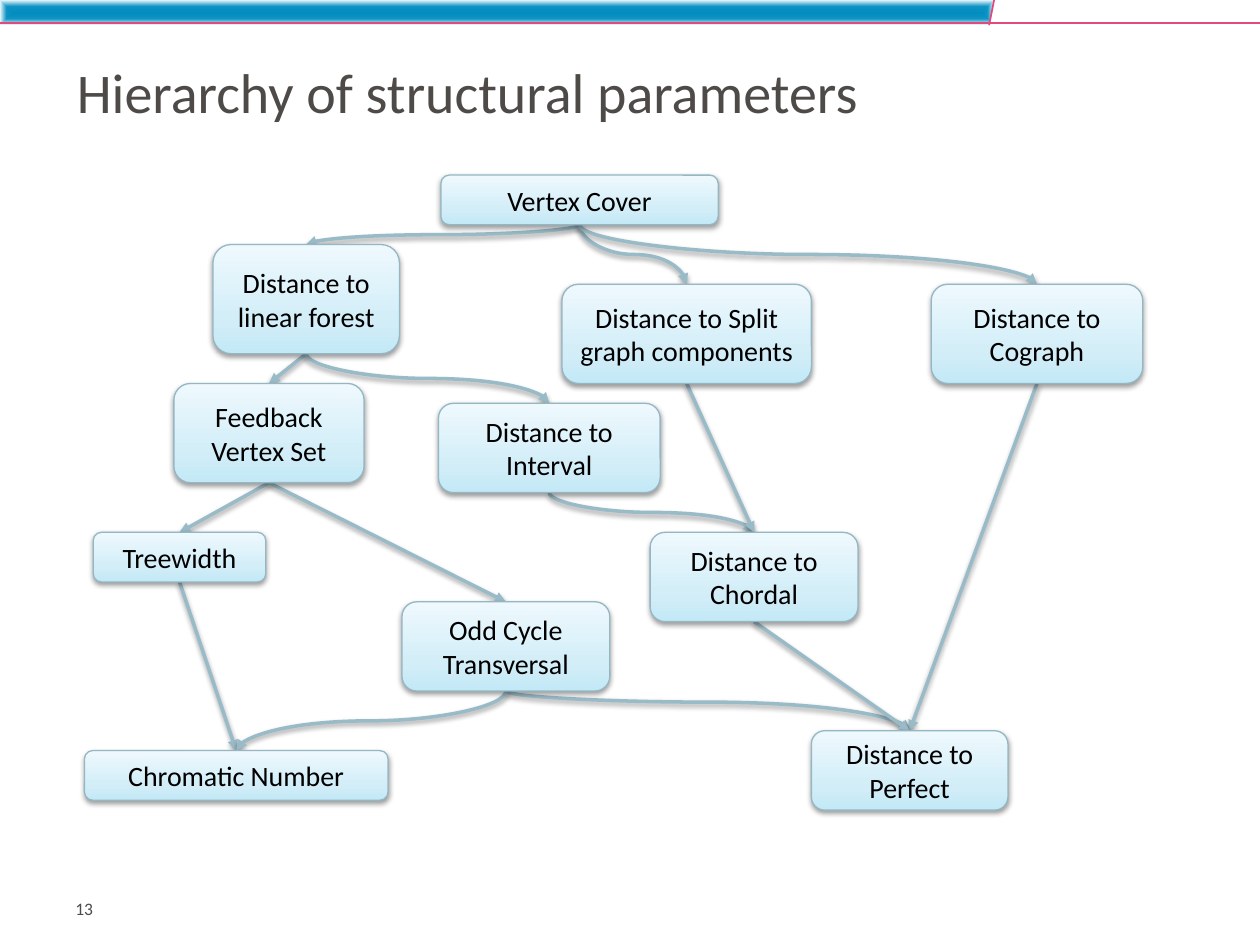
from lxml import etree
from pptx import Presentation
from pptx.dml.color import RGBColor
from pptx.enum.shapes import MSO_CONNECTOR, MSO_SHAPE
from pptx.enum.text import MSO_ANCHOR, PP_ALIGN
from pptx.oxml import parse_xml
from pptx.oxml.ns import nsdecls, qn
from pptx.util import Inches, Pt

STRAIGHT, CURVE = MSO_CONNECTOR.STRAIGHT, MSO_CONNECTOR.CURVE
ROUNDED = MSO_SHAPE.ROUNDED_RECTANGLE
LEFT, CENTER = PP_ALIGN.LEFT, PP_ALIGN.CENTER
TOP, MIDDLE = MSO_ANCHOR.TOP, MSO_ANCHOR.MIDDLE

FONT = "Calibri"
COLORS = {
    "text": "4E4A48", "label": "000000", "shadow": "000000",
    "accent": "E2497F", "arrow": "99BBC7", "border": "95B7C4",
}
BAR_STOPS = [(0, "038CC0"), (49, "0F94C4"), (100, "EEF9FD")]
NODE_STOPS = [(0, "C3E8F6"), (35, "D4EEF8"), (100, "EEF9FD")]
UPWARD = '<a:lin ang="16200000" scaled="0"/>'
FROM_CENTER = ('<a:path path="shape"><a:fillToRect l="50000" t="50000" '
               'r="50000" b="50000"/></a:path>')

GRID_COLUMNS, GRID_ROWS = 84, 64
NODES = {
    "Vertex Cover": (28.3, 0, 22, 5),
    "Distance to linear forest": (10.2, 7, 14.8, 11),
    "Distance to Split graph components": (37.9, 11, 19.8, 10),
    "Distance to Cograph": (67.2, 11, 16.8, 10),
    "Feedback Vertex Set": (7.1, 21, 15.1, 10),
    "Distance to Interval": (28.1, 23, 17.6, 9),
    "Distance to Chordal": (44.9, 36, 16.5, 9),
    "Treewidth": (0.7, 36, 13.7, 5),
    "Chromatic Number": (0, 58, 24.1, 5),
    "Odd Cycle Transversal": (25.2, 43, 16.5, 9),
    "Distance to Perfect": (57.7, 56, 15.6, 8),
}
EDGES = [
    ("Distance to linear forest", "Feedback Vertex Set", STRAIGHT, 0),
    ("Feedback Vertex Set", "Treewidth", STRAIGHT, 0),
    ("Treewidth", "Chromatic Number", STRAIGHT, 0),
    ("Distance to Interval", "Distance to Chordal", CURVE, 0.5),
    ("Odd Cycle Transversal", "Distance to Perfect", CURVE, 0.28),
    ("Distance to Split graph components", "Distance to Chordal", STRAIGHT, 0),
    ("Distance to linear forest", "Distance to Interval", CURVE, 0.5),
    ("Distance to Cograph", "Distance to Perfect", STRAIGHT, 0),
    ("Feedback Vertex Set", "Odd Cycle Transversal", STRAIGHT, 0),
    ("Odd Cycle Transversal", "Chromatic Number", CURVE, 0.5),
    ("Distance to Chordal", "Distance to Perfect", STRAIGHT, 0),
    ("Vertex Cover", "Distance to linear forest", CURVE, 0.5),
    ("Vertex Cover", "Distance to Split graph components", CURVE, 0.5),
    ("Vertex Cover", "Distance to Cograph", CURVE, 0.5),
]


def write_text(shape, text, size, color, align=LEFT, anchor=MIDDLE):
    frame = shape.text_frame
    frame.word_wrap = True
    frame.vertical_anchor = anchor
    para = frame.paragraphs[0]
    para.alignment = align
    span = para.add_run()
    span.text = text
    span.font.name = FONT
    span.font.size = Pt(size)
    span.font.color.rgb = RGBColor.from_string(COLORS[color])
    return frame


def set_line(shape, color, width):
    shape.line.color.rgb = RGBColor.from_string(COLORS[color])
    shape.line.width = Pt(width)


def set_gradient(shape, stops, direction):
    shape.fill.background()
    marks = "".join(
        f'<a:gs pos="{share * 1000}"><a:srgbClr val="{color}"/></a:gs>'
        for share, color in stops)
    gradient = parse_xml(
        f'<a:gradFill {nsdecls("a")} rotWithShape="1">'
        f'<a:gsLst>{marks}</a:gsLst>{direction}</a:gradFill>')
    properties = shape._element.spPr
    properties.replace(properties.find(qn("a:noFill")), gradient)


def set_effects(shape, shadow=True):
    properties = shape._element.spPr
    effects = etree.SubElement(properties, qn("a:effectLst"))
    if shadow:
        effects.append(parse_xml(
            f'<a:outerShdw {nsdecls("a")} blurRad="{Pt(3.1)}" '
            f'dist="{Pt(1.6)}" dir="5400000" rotWithShape="0">'
            f'<a:srgbClr val="{COLORS["shadow"]}"><a:alpha val="38000"/>'
            '</a:srgbClr></a:outerShdw>'))


def add_header(page, left, top, width, height):
    slant_top, slant_bottom = left + int(width * 0.789), left + int(width * 0.785)
    rule = top + int(height * 0.92)
    builder = page.shapes.build_freeform(left, top)
    builder.add_line_segments([
        (slant_top, top), (slant_bottom, top + height), (left, top + height)])
    bar = builder.convert_to_shape()
    set_gradient(bar, BAR_STOPS, FROM_CENTER)
    bar.line.fill.background()
    bar.shadow.inherit = False
    for ends in [(slant_top, top, slant_bottom, top + height),
                 (left + width, rule, left, rule)]:
        line = page.shapes.add_connector(STRAIGHT, *ends)
        set_line(line, "accent", 1)
        set_effects(line, shadow=False)


def add_title(page, left, top, width, height):
    title = page.shapes.title
    title.left, title.top, title.width, title.height = left, top, width, height
    write_text(title, "Hierarchy of structural parameters", 32, "text")


def add_page_number(page, left, top, width, height):
    box = page.shapes.add_textbox(left, top, width, height)
    write_text(box, "13", 10, "text", anchor=TOP).margin_top = 0


def add_node(page, text, left, top, width, height):
    node = page.shapes.add_shape(ROUNDED, left, top, width, height)
    set_gradient(node, NODE_STOPS, UPWARD)
    set_line(node, "border", 0.75)
    set_effects(node)
    write_text(node, text, 16, "label", align=CENTER)
    return node


def bend_downward(edge, bend):
    start_x, start_y, end_x, end_y = edge.begin_x, edge.begin_y, edge.end_x, edge.end_y
    drop, reach = end_y - start_y, abs(end_x - start_x)
    edge.left = (start_x + end_x - drop) // 2
    edge.top = (start_y + end_y - reach) // 2
    edge.width, edge.height = drop, reach
    frame = edge._element.spPr.find(qn("a:xfrm"))
    for flip in ("flipH", "flipV"):
        frame.attrib.pop(flip, None)
    if end_x > start_x:
        frame.set("rot", "16200000")
        frame.set("flipH", "1")
    else:
        frame.set("rot", "5400000")
    guides = edge._element.spPr.find(qn("a:prstGeom")).find(qn("a:avLst"))
    etree.SubElement(guides, qn("a:gd"), name="adj1", fmla=f"val {int(bend * 100000)}")


def add_edge(page, source, target, kind, bend):
    edge = page.shapes.add_connector(
        kind, source.left + source.width // 2, source.top + source.height,
        target.left + target.width // 2, target.top)
    edge.begin_connect(source, 2)
    edge.end_connect(target, 0)
    if kind == CURVE:
        bend_downward(edge, bend)
    set_line(edge, "arrow", 2)
    etree.SubElement(edge.line._get_or_add_ln(), qn("a:tailEnd"), type="triangle")
    set_effects(edge)


def add_hierarchy(page, left, top, width, height):
    column, row = width / GRID_COLUMNS, height / GRID_ROWS
    nodes = {
        text: add_node(page, text, left + int(x * column), top + int(y * row),
                       int(columns * column), int(rows * row))
        for text, (x, y, columns, rows) in NODES.items()}
    for source, target, kind, bend in EDGES:
        add_edge(page, nodes[source], nodes[target], kind, bend)
    for node in nodes.values():
        page.shapes._spTree.append(node._element)


def main():
    deck = Presentation()
    deck.slide_width, deck.slide_height = Inches(10), Inches(7.5)
    page = deck.slides.add_slide(deck.slide_layouts[5])
    add_header(page, 0, 0, deck.slide_width, Inches(0.2))
    add_title(page, Inches(0.51), Inches(0.38), Inches(9), Inches(0.69))
    add_page_number(page, Inches(0.5), Inches(7.13), Inches(2.14), Inches(0.3))
    add_hierarchy(page, Inches(0.67), Inches(1.39), Inches(8.4), Inches(5.04))
    deck.save("out.pptx")


if __name__ == "__main__":
    main()
